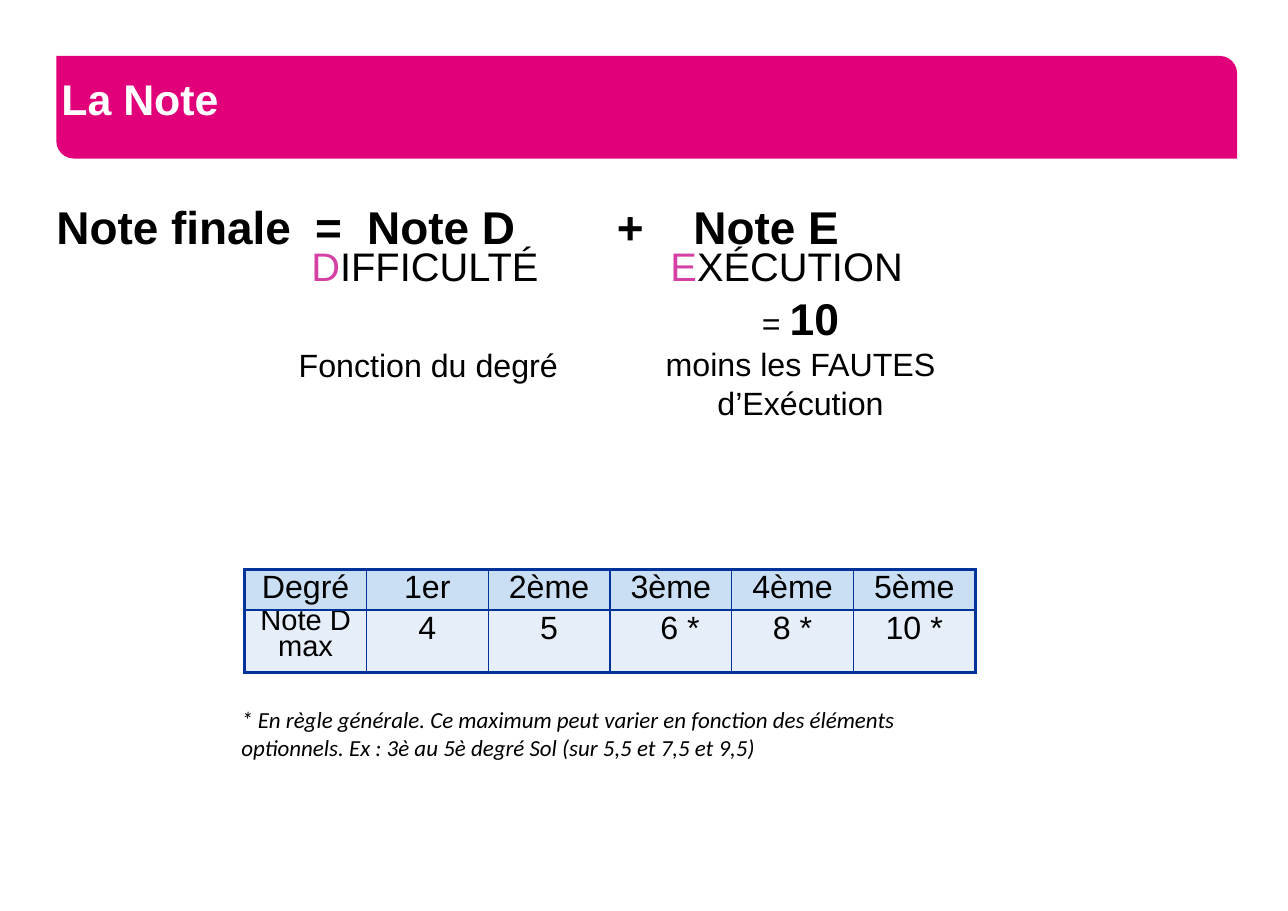
from lxml import etree
from pptx import Presentation
from pptx.dml.color import RGBColor
from pptx.enum import shapes, text
from pptx.oxml import ns
from pptx.util import Pt

MAGENTA = RGBColor(0xE2, 0x00, 0x7A)
PINK = RGBColor(0xD4, 0x40, 0xA4)
BLACK = RGBColor(0, 0, 0)
WHITE = RGBColor(255, 255, 255)
NAVY = RGBColor(0x00, 0x33, 0x99)
HEADER_BLUE = RGBColor(0xCA, 0xDF, 0xF4)
PALE_BLUE = RGBColor(0xE6, 0xEF, 0xF9)
CENTER = text.PP_ALIGN.CENTER


def add_run(paragraph, words, size, color=BLACK, bold=False, name="Arial"):
    run = paragraph.add_run()
    run.text = words
    font = run.font
    font.name, font.size, font.bold = name, Pt(size), bold
    font.color.rgb = color
    return run


def add_box(left, top, width, height, margin=3.6, wrap=True):
    """Add a text box with equal margins and return its text frame."""
    frame = slide.shapes.add_textbox(Pt(left), Pt(top), Pt(width), Pt(height)).text_frame
    frame.word_wrap = wrap
    frame.margin_left = frame.margin_right = Pt(margin)
    frame.margin_top = frame.margin_bottom = Pt(margin)
    return frame


presentation = Presentation()
presentation.slide_width, presentation.slide_height = Pt(841), Pt(594.7)
slide = presentation.slides.add_slide(presentation.slide_layouts[6])

# Title banner
banner = slide.shapes.add_shape(
    shapes.MSO_SHAPE.ROUND_2_DIAG_RECTANGLE, Pt(36.8), Pt(36.5), Pt(771), Pt(67))
banner.adjustments[0], banner.adjustments[1] = 0, 0.17
banner.shadow.inherit = False
banner.fill.solid()
banner.fill.fore_color.rgb = MAGENTA
banner.line.fill.background()
frame = banner.text_frame
frame.margin_left = 0
frame.vertical_anchor = text.MSO_ANCHOR.MIDDLE
title = frame.paragraphs[0]
title.alignment = text.PP_ALIGN.LEFT
title.line_spacing = Pt(22)
add_run(title, "La Note", 28, WHITE, True)

# Formula, with its terms and their meanings set on tab stops
frame = add_box(36.8, 141.8, 771, 60, margin=0)
formula = frame.paragraphs[0]
meanings = frame.add_paragraph()
for paragraph, stops in ((formula, (169, 203, 366, 416)), (meanings, (166.5, 401))):
    paragraph.line_spacing = Pt(24)
    tabs = etree.SubElement(paragraph._p.get_or_add_pPr(), ns.qn("a:tabLst"))
    for stop in stops:
        etree.SubElement(tabs, ns.qn("a:tab"), pos=str(Pt(stop)), algn="l")
add_run(formula, "Note finale\t=\tNote D\t+\tNote E", 30, bold=True)
for initial, rest in (("D", "IFFICULTÉ"), ("E", "XÉCUTION")):
    add_run(meanings, "\t", 30, bold=True)
    add_run(meanings, initial, 26, PINK)
    add_run(meanings, rest, 26)

# Explanations under each term
frame = add_box(427.7, 186.5, 190, 111.6, wrap=False)
start = frame.paragraphs[0]
add_run(start, "= ", 21)
add_run(start, "10", 29, bold=True)
for line in ("moins les FAUTES", "d’Exécution"):
    add_run(frame.add_paragraph(), line, 21)
for paragraph in frame.paragraphs:
    paragraph.alignment = CENTER

degree_note = add_box(190.8, 221.8, 177.8, 30.2, wrap=False).paragraphs[0]
degree_note.alignment = CENTER
add_run(degree_note, "Fonction du degré", 21)

# Maximum D score for each degree
ROWS = (
    ("Degré", "1er", "2ème", "3ème", "4ème", "5ème"),
    ("Note D max", "4", "5", "6 *", "8 *", "10 *"),
)
last_row, last_column = len(ROWS) - 1, len(ROWS[0]) - 1
table = slide.shapes.add_table(
    len(ROWS), len(ROWS[0]), Pt(159.8), Pt(371.5), Pt(477), Pt(67.5)).table
for column in table.columns:
    column.width = Pt(79.5)
table.rows[0].height, table.rows[1].height = Pt(26.7), Pt(40.8)
for r, row in enumerate(ROWS):
    for c, words in enumerate(row):
        cell = table.cell(r, c)
        cell.margin_left = cell.margin_right = cell.margin_top = cell.margin_bottom = 0
        outer_edges = {"L": c == 0, "R": c == last_column, "T": r == 0, "B": r == last_row}
        for side, outer in outer_edges.items():
            border = etree.SubElement(cell._tc.get_or_add_tcPr(), ns.qn(f"a:ln{side}"),
                                      w=str(Pt(2.25 if outer else 1)))
            fill = etree.SubElement(border, ns.qn("a:solidFill"))
            etree.SubElement(fill, ns.qn("a:srgbClr"), val=str(NAVY))
        cell.fill.solid()
        cell.fill.fore_color.rgb = HEADER_BLUE if r == 0 else PALE_BLUE
        paragraph = cell.text_frame.paragraphs[0]
        paragraph.alignment = CENTER
        add_run(paragraph, words, 19 if words == "Note D max" else 21)
table.cell(1, 0).text_frame.paragraphs[0].line_spacing = 0.8
table.cell(1, 3).margin_left = Pt(12)

# Footnote
footnote = add_box(154, 457.2, 487.4, 39.6).paragraphs[0]
add_run(footnote, "* En règle générale. Ce maximum peut varier en fonction des éléments "
        "optionnels. Ex : 3è au 5è degré Sol (sur 5,5 et 7,5 et 9,5)",
        15, name="Calibri").font.italic = True

presentation.save("out.pptx")
